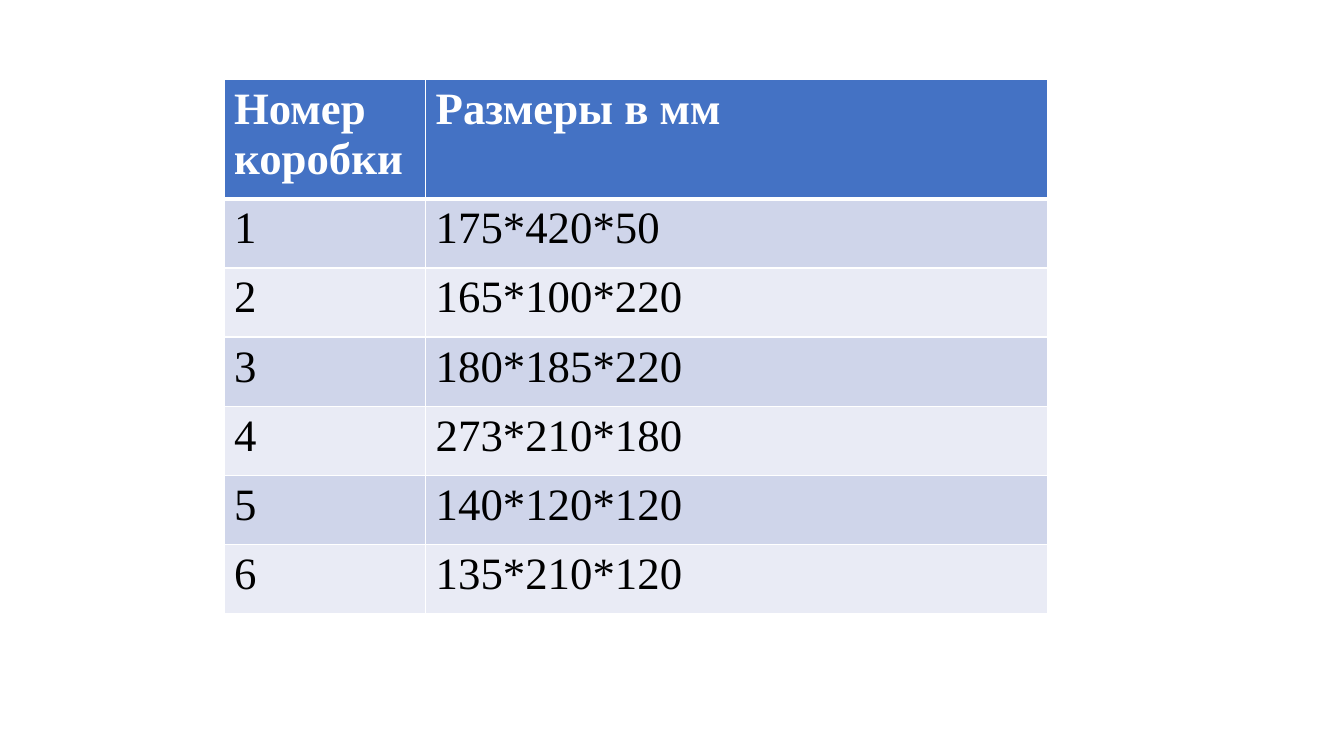
from pptx import Presentation
from pptx.dml.color import RGBColor as RGB
from pptx.oxml import parse_xml
from pptx.oxml.ns import nsdecls
from pptx.util import Pt

WHITE = RGB(0xFF, 0xFF, 0xFF)
BLACK = RGB(0, 0, 0)
BLUE = RGB(0x44, 0x72, 0xC4)
BANDS = [RGB(0xCF, 0xD5, 0xEA), RGB(0xE9, 0xEB, 0xF5)]

HEAD = ["Номер коробки", "Размеры в мм"]
SIZES = ["175*420*50", "165*100*220", "180*185*220",
         "273*210*180", "140*120*120", "135*210*120"]
HEAD_H = 85
SPLIT = 0.245  # share of the width given to the number column


def set_edges(cell, edges):
    """Draw white borders; edges maps a side to its width in points."""
    props = cell._tc.get_or_add_tcPr()
    for side, width in edges.items():
        props.append(parse_xml(
            f'<a:ln{side} {nsdecls("a")} w="{Pt(width)}"><a:solidFill>'
            f'<a:srgbClr val="{WHITE}"/></a:solidFill></a:ln{side}>'))


def fill_cell(cell, text, fill, edges, style):
    set_edges(cell, edges)
    cell.fill.solid()
    cell.fill.fore_color.rgb = fill
    cell.text = text
    font = cell.text_frame.paragraphs[0].runs[0].font
    font.color.rgb = WHITE if style["bold"] else BLACK
    for name, value in style.items():
        setattr(font, name, value)


def add_sizes(slide, left, top, width, height):
    """Table of box sizes, filling the given box."""
    rows = [HEAD] + [[str(n), size] for n, size in enumerate(SIZES, 1)]
    table = slide.shapes.add_table(
        len(rows), len(HEAD), Pt(left), Pt(top), Pt(width), Pt(height)).table

    # Column widths and row heights
    for col, share in zip(table.columns, (SPLIT, 1 - SPLIT)):
        col.width = Pt(width * share)
    for i, row in enumerate(table.rows):
        row.height = Pt((height - HEAD_H) / len(SIZES) if i else HEAD_H)

    # Header and banded body
    for i, texts in enumerate(rows):
        fill = BANDS[(i - 1) % 2] if i else BLUE
        edges = {"L": 1, "R": 1, "T": 3 if i == 1 else 1, "B": 1 if i else 3}
        style = {"name": "Times New Roman", "size": Pt(32), "bold": i == 0}
        for j, text in enumerate(texts):
            fill_cell(table.cell(i, j), text, fill, edges, style)


def main():
    deck = Presentation()
    deck.slide_width, deck.slide_height = Pt(960), Pt(540)
    slide = deck.slides.add_slide(deck.slide_layouts[6])
    add_sizes(slide, 160, 57, 588, 381.4)
    deck.save("out.pptx")


if __name__ == "__main__":
    main()
